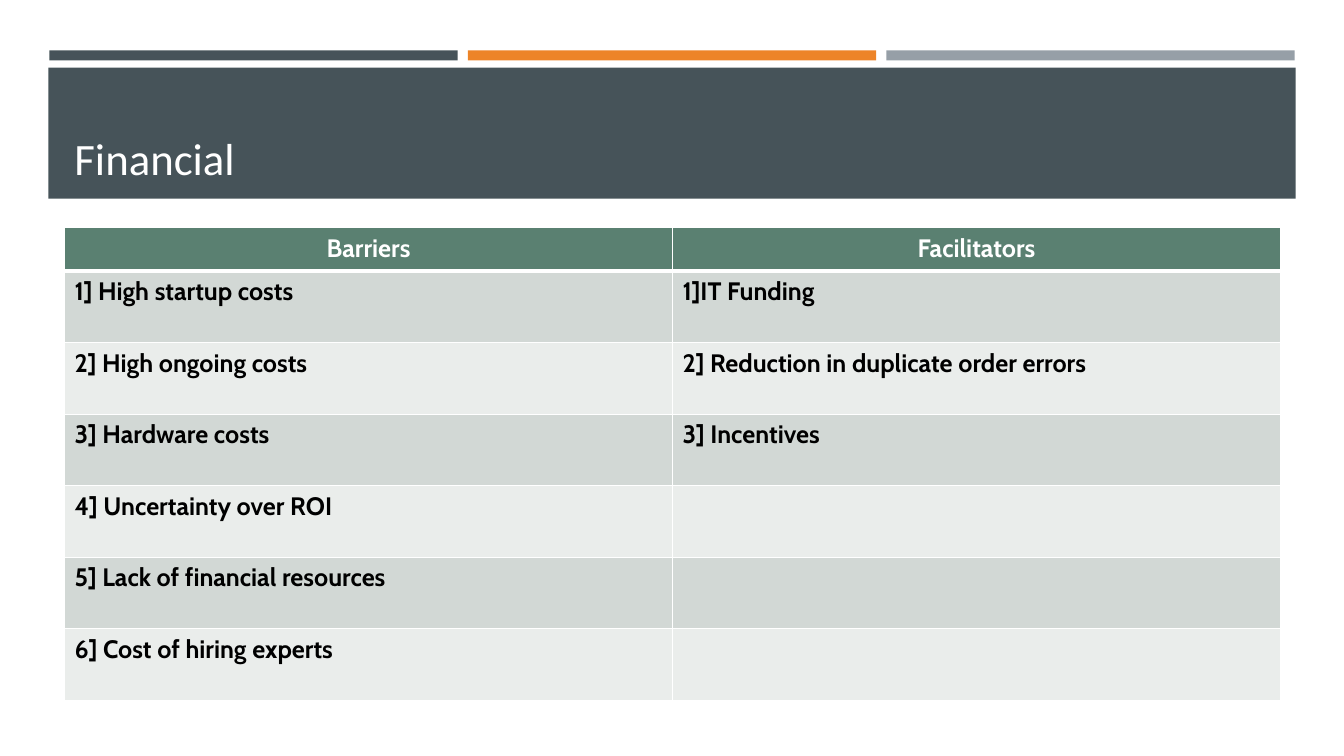
from lxml import etree
from pptx import Presentation
from pptx.dml.color import RGBColor
from pptx.enum.shapes import MSO_SHAPE
from pptx.enum.text import MSO_ANCHOR, PP_ALIGN
from pptx.oxml.ns import qn
from pptx.util import Inches, Pt

RECT = MSO_SHAPE.RECTANGLE
BOTTOM = MSO_ANCHOR.BOTTOM
LEFT, CENTER = PP_ALIGN.LEFT, PP_ALIGN.CENTER

COLORS = {
    "slate": "465359",
    "orange": "ED8428",
    "gray": "969FA7",
    "green": "5A8071",
    "band_dark": "D2D8D5",
    "band_light": "EAEDEB",
    "white": "FFFFFF",
    "black": "000000",
}

HEADERS = ["Barriers", "Facilitators"]
ROWS = [
    ("1] High startup costs", "1]IT Funding"),
    ("2] High ongoing costs", "2] Reduction in duplicate order errors"),
    ("3] Hardware costs", "3] Incentives"),
    ("4] Uncertainty over ROI", ""),
    ("5] Lack of financial resources", ""),
    ("6] Cost of hiring experts", ""),
]


def rgb(name):
    return RGBColor.from_string(COLORS[name])


def write(tf, text, font="Cabin", size=18, color="black", bold=False, align=LEFT):
    p = tf.paragraphs[0]
    p.alignment = align
    r = p.add_run()
    r.text = text
    r.font.name = font
    r.font.size = Pt(size)
    r.font.bold = bold
    r.font.color.rgb = rgb(color)


def set_borders(cell, color, **widths):
    """Add cell borders; widths in points, keyed L, R, T, B in that order."""
    tc_pr = cell._tc.get_or_add_tcPr()
    for i, (side, width) in enumerate(widths.items()):
        ln = etree.Element(qn(f"a:ln{side}"), w=str(Pt(width)))
        fill = etree.SubElement(ln, qn("a:solidFill"))
        etree.SubElement(fill, qn("a:srgbClr"), val=COLORS[color])
        tc_pr.insert(i, ln)


class SlideBuilder:
    def __init__(self, prs):
        self.s = prs.slides.add_slide(prs.slide_layouts[6])

    def bar(self, x, y, w, h, color):
        sp = self.s.shapes.add_shape(RECT, Inches(x), Inches(y), Inches(w), Inches(h))
        sp.shadow.inherit = False
        sp.fill.solid()
        sp.fill.fore_color.rgb = rgb(color)
        sp.line.fill.background()

    def title(self, x, y, w, h, text):
        sp = self.s.shapes.add_textbox(Inches(x), Inches(y), Inches(w), Inches(h))
        tf = sp.text_frame
        tf.word_wrap = True
        tf.vertical_anchor = BOTTOM
        write(tf, text, font="Calibri", size=32, color="white")

    def cell(self, cell, text, fill, bottom=1, **style):
        cell.fill.solid()
        cell.fill.fore_color.rgb = rgb(fill)
        set_borders(cell, "white", L=1, R=1, T=1, B=bottom)
        if text:
            write(cell.text_frame, text, bold=True, **style)

    def table(self, x, y, w, headers, rows, head_h, row_h):
        frame = self.s.shapes.add_table(
            len(rows) + 1, len(headers), Inches(x), Inches(y),
            Inches(w), Inches(head_h + row_h * len(rows)))
        table = frame.table
        for col in table.columns:
            col.width = Inches(w / len(headers))
        for i, row in enumerate(table.rows):
            row.height = Inches(row_h if i else head_h)
        for j, text in enumerate(headers):
            self.cell(table.cell(0, j), text, "green", bottom=3,
                      color="white", align=CENTER)
        for i, row in enumerate(rows, 1):
            band = "band_dark" if i % 2 else "band_light"
            for j, text in enumerate(row):
                self.cell(table.cell(i, j), text, band)


def main():
    prs = Presentation()
    prs.slide_width, prs.slide_height = Inches(13.33), Inches(7.5)
    slide = SlideBuilder(prs)

    # Accent bars
    for i, color in enumerate(["slate", "orange", "gray"]):
        slide.bar(0.49 + 4.15 * i, 0.5, 4.05, 0.1, color)

    # Title band
    slide.bar(0.48, 0.67, 12.37, 1.3, "slate")
    slide.title(0.64, 0.77, 12.06, 1.11, "Financial")

    # Barriers and facilitators
    slide.table(0.64, 2.26, 12.06, HEADERS, ROWS, head_h=0.43, row_h=0.71)

    prs.save("out.pptx")


if __name__ == "__main__":
    main()
